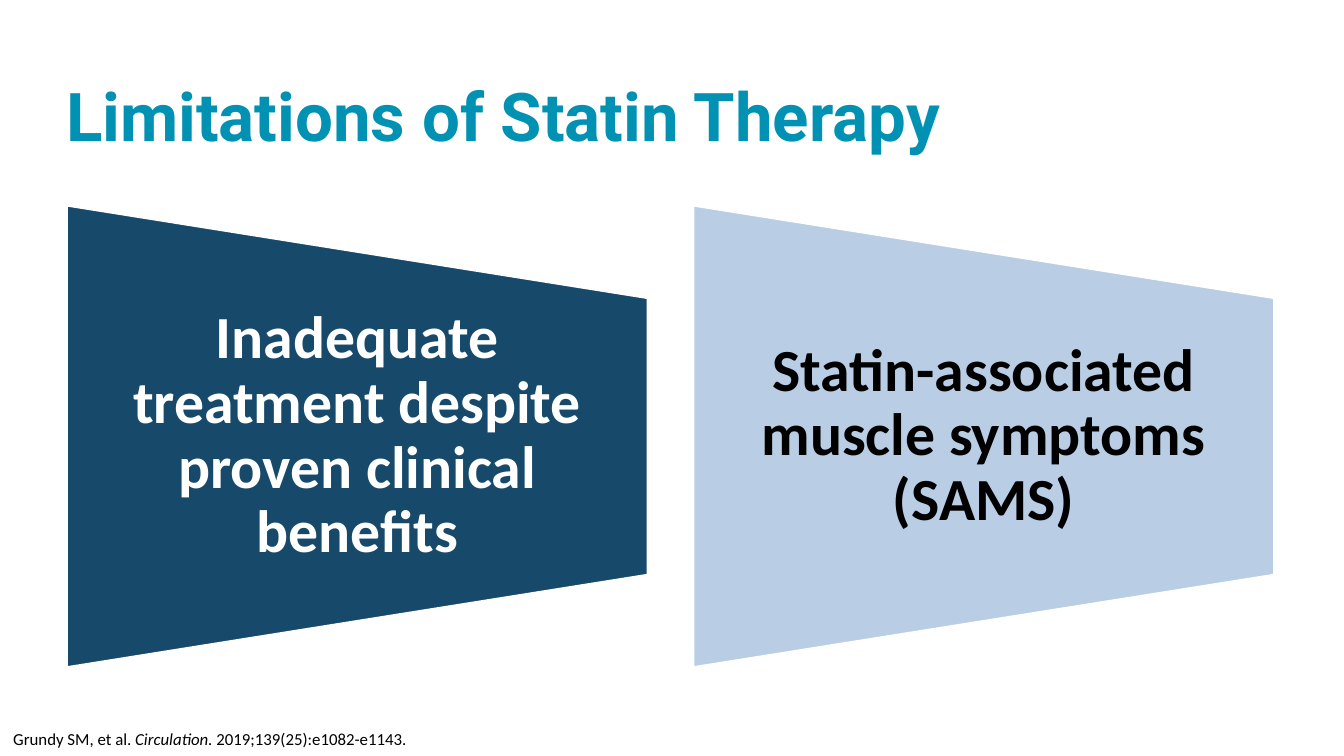
from pptx import Presentation
from pptx.dml.color import RGBColor
from pptx.enum.shapes import MSO_SHAPE
from pptx.enum.text import MSO_ANCHOR, MSO_AUTO_SIZE, PP_ALIGN
from pptx.util import Pt

TRAPEZOID = MSO_SHAPE.FLOWCHART_MANUAL_OPERATION
TOP, MIDDLE = MSO_ANCHOR.TOP, MSO_ANCHOR.MIDDLE
LEFT, CENTER = PP_ALIGN.LEFT, PP_ALIGN.CENTER

# Content
COLORS = {"teal": "0091B3", "navy": "17496B", "pale": "B9CDE5",
          "white": "FFFFFF", "black": "000000"}
TITLE = "Limitations of Statin Therapy"
LIMITATIONS = [  # text, fill, text colour
    ("Inadequate treatment despite proven clinical benefits", "navy", "white"),
    ("Statin-associated muscle symptoms (SAMS)", "pale", "black"),
]
CITATION = [  # text, italic
    ("Grundy SM, et al. ", False),
    ("Circulation.", True),
    (" 2019;139(25):e1082-e1143.", False),
]

# Layout in points
MARGIN = 35.4
PANEL_WIDTH, PANEL_HEIGHT = 312, 248.4
PANEL_STEP = 335.6
PANEL_MIDDLE = 199.8 + 34
LABEL_HEIGHT = 149


def color(name):
    return RGBColor.from_string(COLORS[name])


def set_frame(box, anchor, side_inset=0, wrap=True):
    frame = box.text_frame
    frame.auto_size = MSO_AUTO_SIZE.NONE
    frame.word_wrap = wrap
    frame.vertical_anchor = anchor
    frame.margin_left = frame.margin_right = Pt(side_inset)
    frame.margin_top = frame.margin_bottom = 0
    return frame.paragraphs[0]


def add_span(para, text, font, size, ink, bold=False, italic=False):
    span = para.add_run()
    span.text = text
    span.font.name = font
    span.font.size = Pt(size)
    span.font.bold = bold
    span.font.italic = italic
    span.font.color.rgb = color(ink)


def add_panel(page, left, text, fill, ink):
    # The preset is turned on its side, so width and height trade places
    center = left + PANEL_WIDTH / 2
    panel = page.shapes.add_shape(
        TRAPEZOID, Pt(center - PANEL_HEIGHT / 2), Pt(PANEL_MIDDLE - PANEL_WIDTH / 2),
        Pt(PANEL_HEIGHT), Pt(PANEL_WIDTH))
    panel.rotation = 270
    panel.shadow.inherit = False
    panel.fill.solid()
    panel.fill.fore_color.rgb = color(fill)
    panel.line.color.rgb = color("white")
    panel.line.width = Pt(2)

    label = page.shapes.add_textbox(
        Pt(left), Pt(PANEL_MIDDLE - LABEL_HEIGHT / 2), Pt(PANEL_WIDTH), Pt(LABEL_HEIGHT))
    para = set_frame(label, MIDDLE, side_inset=16)
    para.alignment = CENTER
    para.line_spacing = 0.9
    add_span(para, text, "Calibri", 32, ink, bold=True)


def main():
    deck = Presentation()
    deck.slide_width, deck.slide_height = Pt(720), Pt(405)
    page = deck.slides.add_slide(deck.slide_layouts[5])

    # Title
    title = page.shapes.title
    title.left, title.top = Pt(MARGIN), Pt(44.6)
    title.width, title.height = Pt(648), Pt(56)
    para = set_frame(title, TOP)
    para.alignment = LEFT
    para.line_spacing = 0.9
    add_span(para, TITLE, "Roboto", 36, "teal", bold=True)

    # Limitation panels
    for index, (text, fill, ink) in enumerate(LIMITATIONS):
        add_panel(page, MARGIN + index * PANEL_STEP, text, fill, ink)

    # Citation
    citation = page.shapes.add_textbox(0, Pt(387), Pt(227), Pt(18))
    para = set_frame(citation, MIDDLE, side_inset=7.2, wrap=False)
    para.alignment = LEFT
    for text, italic in CITATION:
        add_span(para, text, "Calibri", 9, "black", italic=italic)

    deck.save("out.pptx")


if __name__ == "__main__":
    main()
